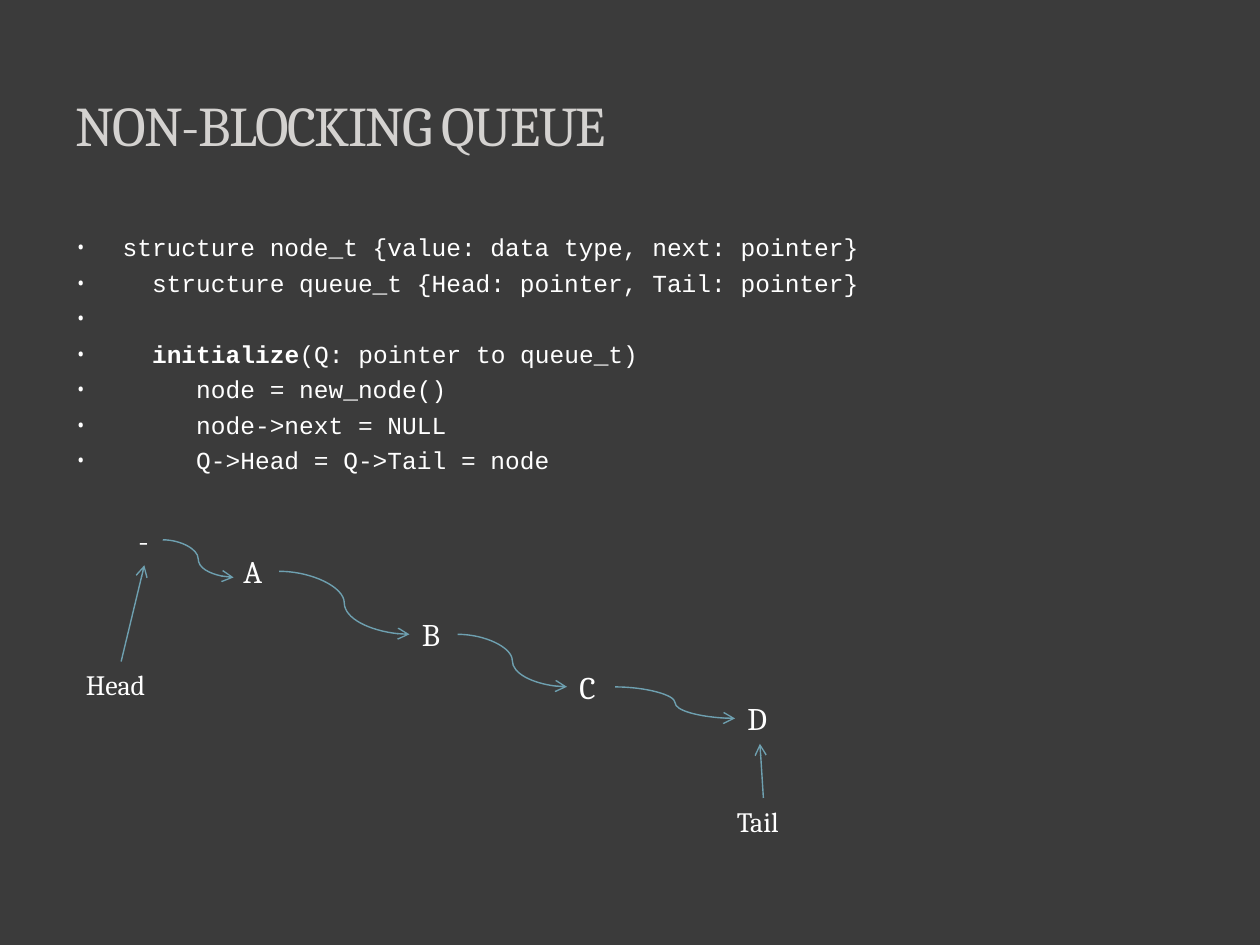
"""Build a slide showing a non-blocking queue and its initialisation."""

from dataclasses import dataclass
from typing import Optional

from lxml.etree import SubElement
from pptx import Presentation
from pptx.dml.color import RGBColor
from pptx.enum.shapes import MSO_CONNECTOR
from pptx.enum.text import MSO_ANCHOR, MSO_AUTO_SIZE, PP_ALIGN
from pptx.oxml.ns import qn
from pptx.util import Pt

COLOURS = {
    "background": "3B3B3B",
    "title": "D4D2D0",
    "text": "FFFFFF",
    "arrow": "6EA0B0",
}
TITLE_FORMAT = {"name": "Cambria", "size": Pt(32), "bold": False}
CODE_FORMAT = {"name": "Courier New", "size": Pt(14), "bold": False}
NODE_FORMAT = {"name": "Cambria", "size": Pt(18)}
POINTER_FORMAT = {"name": "Cambria", "size": Pt(16)}
TOP, LEFT, BOTTOM, RIGHT = range(4)


@dataclass
class Label:
    text: str
    left: float
    top: float
    width: float
    height: float
    style: dict


@dataclass
class Link:
    source: str
    target: str
    kind: MSO_CONNECTOR
    source_side: int
    target_side: int
    end: Optional[tuple] = None


CODE_LINES = [
    [("structure node_t {value: data type, next: pointer}", False)],
    [("  structure queue_t {Head: pointer, Tail: pointer}", False)],
    [("  ", False)],
    [("  ", False), ("initialize", True), ("(Q: pointer to queue_t)", False)],
    [("     node = new_node()", False)],
    [("     node->next = NULL", False)],
    [("     Q->Head = Q->Tail = node", False)],
]
LABELS = [
    Label("-", 72, 294, 21, 29, NODE_FORMAT),
    Label("A", 132, 312, 27.5, 29, NODE_FORMAT),
    Label("B", 234, 348, 27.5, 29, NODE_FORMAT),
    Label("C", 324, 378, 27.5, 29, NODE_FORMAT),
    Label("D", 420, 396, 28.5, 29, NODE_FORMAT),
    Label("Head", 42, 378, 54.5, 26.7, POINTER_FORMAT),
    Label("Tail", 414, 456, 44.5, 26.7, POINTER_FORMAT),
]
LINKS = [
    Link("-", "A", MSO_CONNECTOR.CURVE, RIGHT, LEFT, (133.5, 330)),
    Link("A", "B", MSO_CONNECTOR.CURVE, RIGHT, LEFT),
    Link("B", "C", MSO_CONNECTOR.CURVE, RIGHT, LEFT),
    Link("C", "D", MSO_CONNECTOR.CURVE, RIGHT, LEFT),
    Link("Head", "-", MSO_CONNECTOR.STRAIGHT, TOP, BOTTOM),
    Link("Tail", "D", MSO_CONNECTOR.STRAIGHT, TOP, BOTTOM),
]


def add_span(para, text: str, style: dict, colour: str):
    """Add a formatted run to a paragraph."""
    span = para.add_run()
    span.text = text
    for name, value in style.items():
        setattr(span.font, name, value)
    span.font.color.rgb = RGBColor.from_string(COLOURS[colour])
    return span


def add_title(page, text: str) -> None:
    """Place and fill the title placeholder."""
    title = page.shapes.title
    title.left, title.top, title.width, title.height = Pt(36), Pt(21.6), Pt(648), Pt(98.6)
    title.text_frame.vertical_anchor = MSO_ANCHOR.MIDDLE
    para = title.text_frame.paragraphs[0]
    para.alignment = PP_ALIGN.LEFT
    span = add_span(para, text, TITLE_FORMAT, "title")
    span.font._element.set("spc", "-100")


def add_bullet(para) -> None:
    """Give a paragraph a hanging round bullet."""
    properties = para._p.get_or_add_pPr()
    properties.set("marL", str(Pt(27)))
    properties.set("indent", str(Pt(-27)))
    SubElement(properties, qn("a:buFont")).set("typeface", "Cambria")
    SubElement(properties, qn("a:buChar")).set("char", "•")


def add_code(page) -> None:
    """Add the bulleted pseudocode."""
    box = page.shapes.add_textbox(Pt(36), Pt(126), Pt(648), Pt(192))
    frame = box.text_frame
    frame.word_wrap = True
    frame.margin_top = Pt(6.6)
    for number, line in enumerate(CODE_LINES):
        para = frame.add_paragraph() if number else frame.paragraphs[0]
        add_bullet(para)
        if number:
            para.space_before = Pt(3.5)
        for text, bold in line:
            add_span(para, text, {**CODE_FORMAT, "bold": bold}, "text")


def add_label(page, label: Label):
    """Add a node or pointer name and return its box."""
    box = page.shapes.add_textbox(
        Pt(label.left), Pt(label.top), Pt(label.width), Pt(label.height)
    )
    box.text_frame.word_wrap = False
    box.text_frame.auto_size = MSO_AUTO_SIZE.SHAPE_TO_FIT_TEXT
    add_span(box.text_frame.paragraphs[0], label.text, label.style, "text")
    return box


def add_link(page, link: Link, boxes: dict) -> None:
    """Draw an arrow between two labels."""
    arrow = page.shapes.add_connector(link.kind, Pt(0), Pt(0), Pt(0), Pt(0))
    arrow.begin_connect(boxes[link.source], link.source_side)
    if link.end:
        arrow.end_x, arrow.end_y = map(Pt, link.end)
    else:
        arrow.end_connect(boxes[link.target], link.target_side)
    arrow.line.color.rgb = RGBColor.from_string(COLOURS["arrow"])
    arrow.line.width = Pt(0.79)
    SubElement(arrow.line._get_or_add_ln(), qn("a:tailEnd")).set("type", "arrow")
    SubElement(arrow._element.spPr, qn("a:effectLst"))


def main() -> None:
    """Build and save the deck."""
    deck = Presentation()
    deck.slide_width, deck.slide_height = Pt(720), Pt(540)
    page = deck.slides.add_slide(deck.slide_layouts[5])
    page.background.fill.solid()
    page.background.fill.fore_color.rgb = RGBColor.from_string(COLOURS["background"])
    add_title(page, "NON-BLOCKING QUEUE")
    add_code(page)
    boxes = {label.text: add_label(page, label) for label in LABELS}
    for link in LINKS:
        add_link(page, link, boxes)
    deck.save("out.pptx")


if __name__ == "__main__":
    main()
